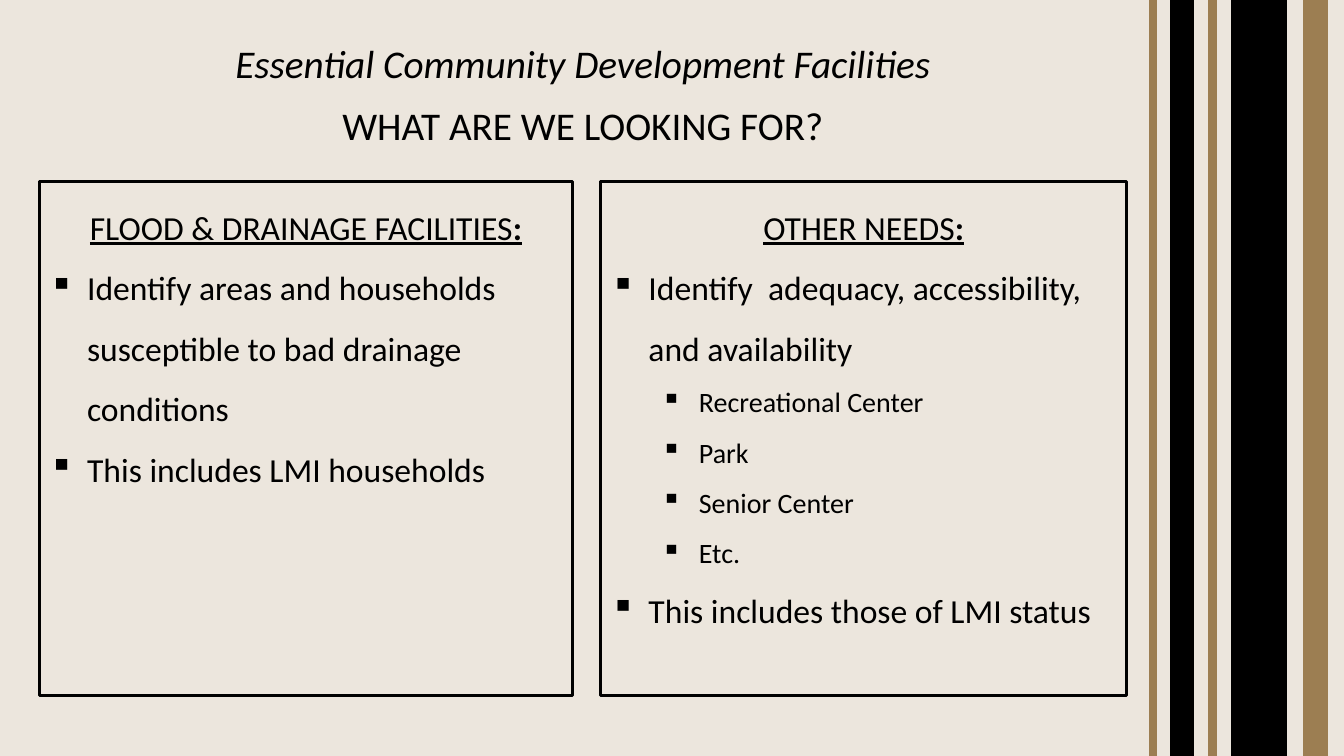
from lxml import etree
from pptx import Presentation
from pptx.dml.color import RGBColor
from pptx.enum.shapes import MSO_SHAPE
from pptx.enum.text import MSO_ANCHOR, PP_ALIGN
from pptx.oxml.ns import qn
from pptx.util import Pt

RECTANGLE = MSO_SHAPE.RECTANGLE
TOP, BOTTOM = MSO_ANCHOR.TOP, MSO_ANCHOR.BOTTOM
LEFT, CENTER = PP_ALIGN.LEFT, PP_ALIGN.CENTER

BLACK = RGBColor(0x00, 0x00, 0x00)
TAN = RGBColor(0x9C, 0x7E, 0x52)
CREAM = RGBColor(0xEC, 0xE6, 0xDD)
FONT = "Calibri"

# Content: titles as (text, top, italic)
TITLES = [
    ("Essential Community Development Facilities", 20.2, True),
    ("WHAT ARE WE LOOKING FOR?", 64.8, False),
]
# Panels as (left, width, heading, [(level, text)])
PANELS = [
    (28.1, 380.9, "FLOOD & DRAINAGE FACILITIES", [
        (0, "Identify areas and households susceptible to bad drainage conditions"),
        (0, "This includes LMI households"),
    ]),
    (429.1, 375.8, "OTHER NEEDS", [
        (0, "Identify  adequacy, accessibility, and availability"),
        (1, "Recreational Center"),
        (1, "Park"),
        (1, "Senior Center"),
        (1, "Etc."),
        (0, "This includes those of LMI status"),
    ]),
]
# Stripes as (left, width, color)
STRIPES = [
    (879.8, 38.9, BLACK),
    (863.3, 5.8, TAN),
    (931, 17.3, TAN),
    (835.9, 16.6, BLACK),
    (821.5, 4.3, TAN),
]

# Layout
PAGE_WIDTH, PAGE_HEIGHT = 960, 540
TITLE_LEFT, TITLE_WIDTH, TITLE_HEIGHT = 28.1, 776.2, 45.4
PANEL_TOP, PANEL_HEIGHT = 129.6, 367.2
BULLET_HANG, LEVEL_STEP = 27, 36
LEVEL_SIZES = (24, 20)


def add_rectangle(page, left, top, width, height, line_width, line_color, fill=None):
    box = page.shapes.add_shape(RECTANGLE, Pt(left), Pt(top), Pt(width), Pt(height))
    box.shadow.inherit = False
    if fill is None:
        box.fill.background()
    else:
        box.fill.solid()
        box.fill.fore_color.rgb = fill
    box.line.color.rgb = line_color
    box.line.width = Pt(line_width)
    return box


def prepare_frame(box, anchor):
    frame = box.text_frame
    frame.word_wrap = True
    frame.vertical_anchor = anchor
    return frame


def add_span(para, text, size=24, bold=False, italic=False, underline=False):
    span = para.add_run()
    span.text = text
    font = span.font
    font.name, font.size, font.color.rgb = FONT, Pt(size), BLACK
    font.bold, font.italic, font.underline = bold, italic, underline


def set_bullet(para, level):
    para.level = level
    properties = para._p.get_or_add_pPr()
    properties.set("marL", str(Pt(BULLET_HANG + level * LEVEL_STEP)))
    properties.set("indent", str(-Pt(BULLET_HANG)))
    etree.SubElement(properties, qn("a:buChar")).set("char", "▪")


def add_title(page, text, top, italic):
    box = page.shapes.add_textbox(
        Pt(TITLE_LEFT), Pt(top), Pt(TITLE_WIDTH), Pt(TITLE_HEIGHT))
    para = prepare_frame(box, BOTTOM).paragraphs[0]
    para.alignment, para.line_spacing = CENTER, 0.9
    add_span(para, text, size=28, italic=italic)


def add_panel(page, left, width, heading, items):
    box = add_rectangle(page, left, PANEL_TOP, width, PANEL_HEIGHT, 2.25, BLACK)
    frame = prepare_frame(box, TOP)
    para = frame.paragraphs[0]
    para.alignment, para.line_spacing = CENTER, 1.5
    add_span(para, heading, underline=True)
    add_span(para, ":", bold=True, underline=True)
    for level, text in items:
        para = frame.add_paragraph()
        para.alignment, para.line_spacing = LEFT, 1.5
        set_bullet(para, level)
        add_span(para, text, size=LEVEL_SIZES[level])


def main():
    deck = Presentation()
    deck.slide_width, deck.slide_height = Pt(PAGE_WIDTH), Pt(PAGE_HEIGHT)
    page = deck.slides.add_slide(deck.slide_layouts[6])
    page.background.fill.solid()
    page.background.fill.fore_color.rgb = CREAM

    # Headings and the two panels
    for title in TITLES:
        add_title(page, *title)
    for panel in PANELS:
        add_panel(page, *panel)

    # Vertical stripes on the right
    for left, width, color in STRIPES:
        add_rectangle(page, left, 0, width, PAGE_HEIGHT, 1, color, fill=color)

    deck.save("out.pptx")


if __name__ == "__main__":
    main()
